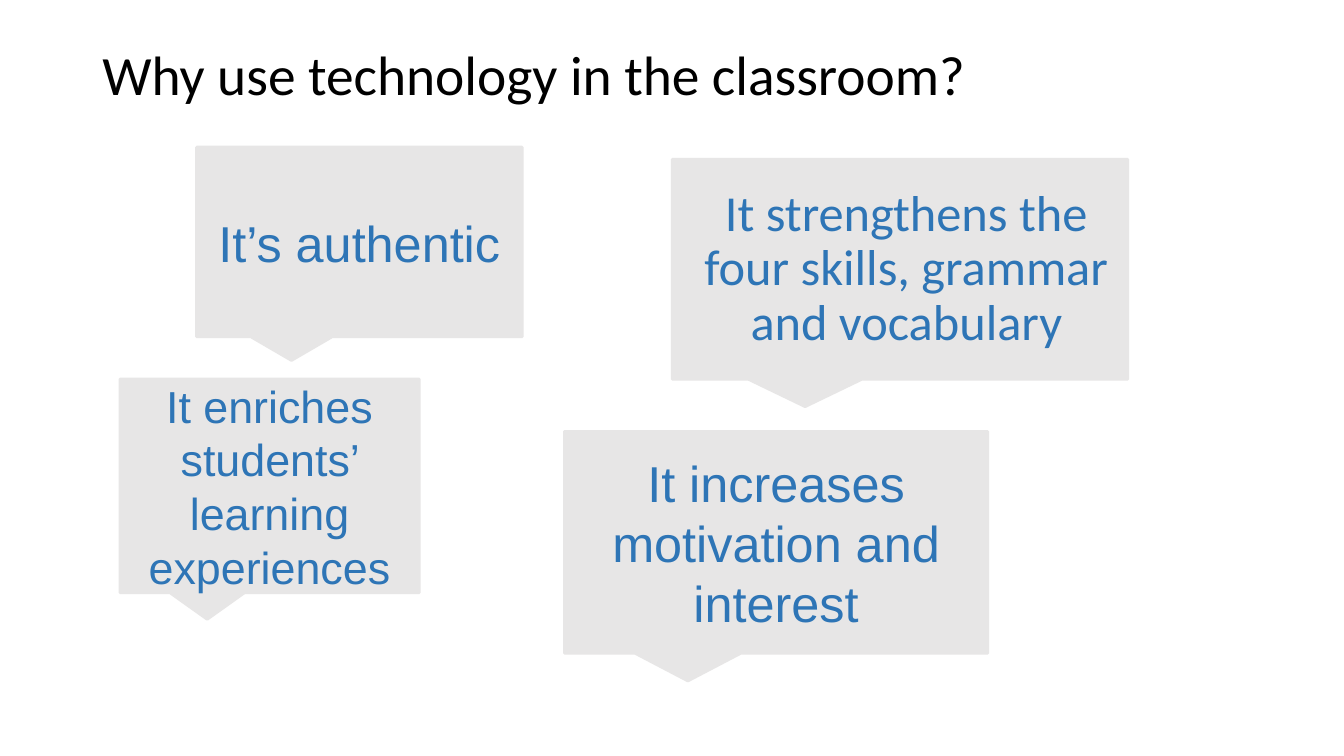
from pptx import Presentation
from pptx.dml.color import RGBColor
from pptx.enum.shapes import MSO_SHAPE
from pptx.enum.text import MSO_ANCHOR, PP_ALIGN
from pptx.util import Pt

CALLOUT = MSO_SHAPE.RECTANGULAR_CALLOUT
MIDDLE = MSO_ANCHOR.MIDDLE
LEFT = PP_ALIGN.LEFT
CENTER = PP_ALIGN.CENTER


def color(hex_string):
    return RGBColor.from_string(hex_string)


class SlideBuilder:
    title_color = "000000"
    callout_fill = "E7E6E6"
    callout_text = "2E75B6"

    def __init__(self, slide):
        self.slide = slide

    def set_text(self, shape, text, size, font, text_color, alignment, spacing):
        frame = shape.text_frame
        frame.word_wrap = True
        frame.vertical_anchor = MIDDLE
        paragraph = frame.paragraphs[0]
        paragraph.text = text
        paragraph.alignment = alignment
        paragraph.line_spacing = spacing
        paragraph.font.size = Pt(size)
        paragraph.font.name = font
        paragraph.font.color.rgb = color(text_color)
        return paragraph

    def title(self, box, text):
        shape = self.slide.shapes.add_textbox(*map(Pt, box))
        self.set_text(shape, text, 39.6, "Calibri", self.title_color, LEFT, 0.9)

    def callout(self, box, text, size=36, font="Arial", spacing=1.0, indent=0):
        shape = self.slide.shapes.add_shape(CALLOUT, *map(Pt, box))
        shape.shadow.inherit = False
        shape.fill.solid()
        shape.fill.fore_color.rgb = color(self.callout_fill)
        shape.line.color.rgb = color(self.callout_fill)
        shape.line.width = Pt(2)
        paragraph = self.set_text(shape, text, size, font, self.callout_text, CENTER, spacing)
        if indent:
            paragraph._p.get_or_add_pPr().set("marL", str(Pt(indent)))


def main():
    presentation = Presentation()
    presentation.slide_width = Pt(960)
    presentation.slide_height = Pt(540)
    slide = presentation.slides.add_slide(presentation.slide_layouts[6])
    builder = SlideBuilder(slide)

    builder.title((66, 28.8, 828, 52.6), "Why use technology in the classroom?")
    builder.callout((140.4, 105.1, 232.6, 135.4), "It’s authentic")
    builder.callout(
        (480.2, 113.8, 325.4, 157),
        "It strengthens the four skills, grammar and vocabulary",
        font="Calibri",
        spacing=0.9,
        indent=9,
    )
    builder.callout(
        (85.7, 270.7, 213.8, 152.6),
        "It enriches students’ learning experiences",
        size=32,
    )
    builder.callout((403.2, 308.2, 302.4, 158.4), "It increases motivation and interest")

    presentation.save("out.pptx")


if __name__ == "__main__":
    main()
